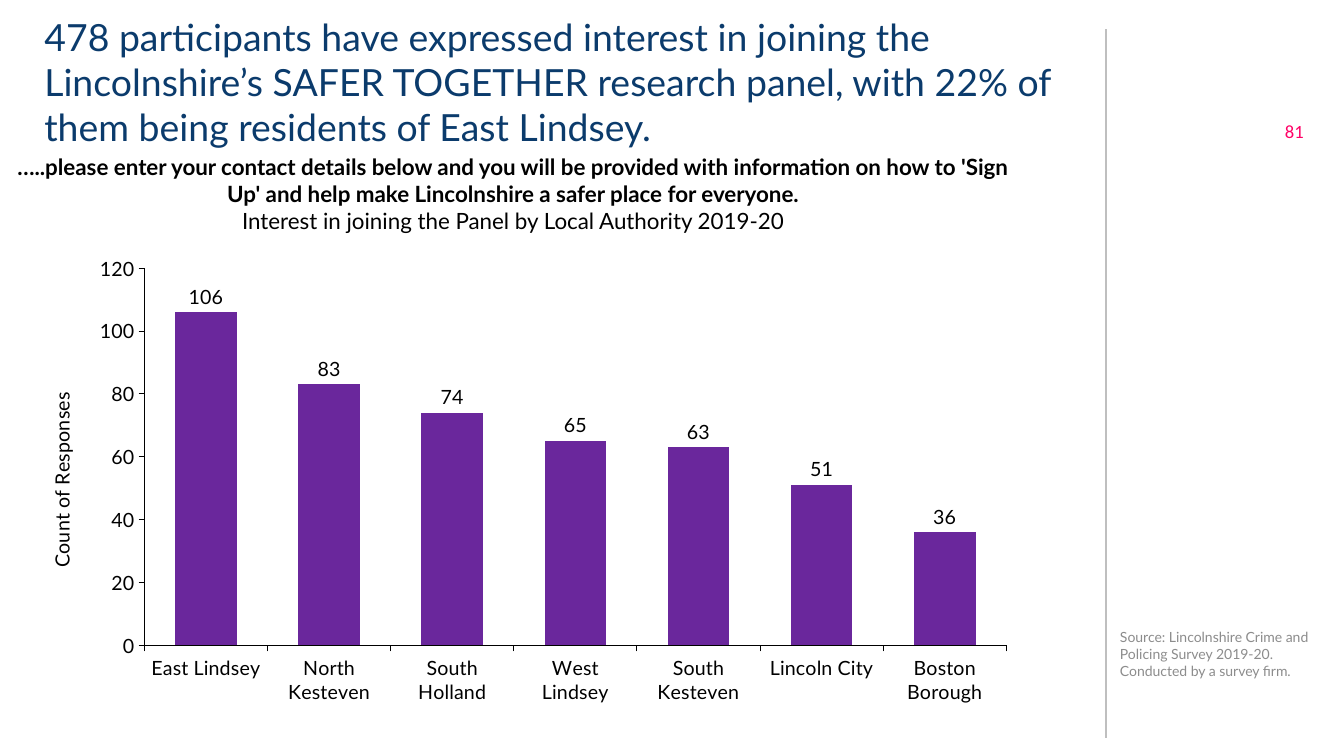
import pptx
import pptx.chart.data
import pptx.dml.color
import pptx.enum.chart
import pptx.enum.shapes
import pptx.enum.text
import pptx.oxml
import pptx.oxml.ns
import pptx.util
from pptx.util import Inches

TITLE = ("478 participants have expressed interest in joining the Lincolnshire’s SAFER TOGETHER "
         "research panel, with 22% of them being residents of East Lindsey.")
QUESTION = ("…..please enter your contact details below and you will be provided with information "
            "on how to 'Sign Up' and help make Lincolnshire a safer place for everyone.")
CHART_TITLE = "Interest in joining the Panel by Local Authority 2019-20"
SOURCE = "Source: Lincolnshire Crime and Policing Survey 2019-20. Conducted by a survey firm."
PAGE = "81"
AXIS_TITLE = "Count of Responses"
RESPONSES = {
    "East Lindsey": 106,
    "North Kesteven": 83,
    "South Holland": 74,
    "West Lindsey": 65,
    "South Kesteven": 63,
    "Lincoln City": 51,
    "Boston Borough": 36,
}
PLOT_AREA = {"x": 0.12, "y": 0.05, "w": 0.86, "h": 0.81}
BLACK = "000000"
ALIGN = pptx.enum.text.PP_ALIGN
ANCHOR = pptx.enum.text.MSO_ANCHOR


def rgb(value):
    return pptx.dml.color.RGBColor.from_string(value)


def style(font, size, color, name="Lato", bold=False):
    font.size = pptx.util.Pt(size)
    font.name = name
    font.bold = bold
    font.color.rgb = rgb(color)


def write(sp, box, lines, size, color, name="Lato", align=ALIGN.LEFT,
          anchor=ANCHOR.TOP, inset=(0.1, 0.05)):
    sp.left, sp.top, sp.width, sp.height = map(Inches, box)
    tf = sp.text_frame
    tf.word_wrap = True
    tf.auto_size = pptx.enum.text.MSO_AUTO_SIZE.NONE
    tf.vertical_anchor = anchor
    tf.margin_left = tf.margin_right = Inches(inset[0])
    tf.margin_top = tf.margin_bottom = Inches(inset[1])
    for i, (text, bold) in enumerate(lines):
        p = tf.add_paragraph() if i else tf.paragraphs[0]
        p.alignment = align
        p.line_spacing = 1.0
        p.space_before = pptx.util.Pt(0)
        r = p.add_run()
        r.text = text
        style(r.font, size, color, name, bold)


def add_text(s, box, lines, size, color, **options):
    sp = s.shapes.add_textbox(*map(Inches, box))
    write(sp, box, lines, size, color, **options)


def add_divider(s):
    line = s.shapes.add_connector(pptx.enum.shapes.MSO_CONNECTOR.STRAIGHT,
                                  Inches(10.97), Inches(0.29), Inches(10.97), Inches(7.32))
    line.line.color.rgb = rgb("BFBFBF")
    line.line.width = pptx.util.Pt(1)
    line._element.spPr.append(pptx.oxml.parse_xml(
        f"<a:effectLst {pptx.oxml.ns.nsdecls('a')}/>"))


def place_plot(chart):
    plot_area = chart._chartSpace.chart.plotArea
    for old in plot_area.findall(pptx.oxml.ns.qn("c:layout")):
        plot_area.remove(old)
    sizes = "".join(f'<c:{k} val="{v}"/>' for k, v in PLOT_AREA.items())
    plot_area.insert(0, pptx.oxml.parse_xml(
        f"<c:layout {pptx.oxml.ns.nsdecls('c')}><c:manualLayout>"
        '<c:layoutTarget val="inner"/><c:xMode val="edge"/><c:yMode val="edge"/>'
        f"{sizes}</c:manualLayout></c:layout>"))


def add_responses_chart(s):
    data = pptx.chart.data.CategoryChartData(number_format="0")
    data.categories = list(RESPONSES)
    data.add_series("Series 1", list(RESPONSES.values()))
    chart = s.shapes.add_chart(pptx.enum.chart.XL_CHART_TYPE.COLUMN_CLUSTERED, Inches(0.24),
                               Inches(2.43), Inches(9.94), Inches(4.62), data).chart
    chart.has_legend = False
    chart.has_title = False
    style(chart.font, 14, BLACK)

    plot = chart.plots[0]
    plot.gap_width = 100
    plot.vary_by_categories = False
    fill = plot.series[0].format.fill
    fill.solid()
    fill.fore_color.rgb = rgb("6A279C")
    plot.has_data_labels = True
    labels = plot.data_labels
    labels.show_value = True
    labels.number_format = "0"
    labels.number_format_is_linked = False
    labels.position = pptx.enum.chart.XL_LABEL_POSITION.OUTSIDE_END
    style(labels.font, 14, BLACK)

    for axis in (chart.category_axis, chart.value_axis):
        axis.has_major_gridlines = False
        axis.major_tick_mark = pptx.enum.chart.XL_TICK_MARK.OUTSIDE
        axis.minor_tick_mark = pptx.enum.chart.XL_TICK_MARK.NONE
        axis.format.line.color.rgb = rgb(BLACK)
        axis.format.line.width = pptx.util.Pt(0.75)
        style(axis.tick_labels.font, 14, BLACK)

    axis = chart.value_axis
    axis.minimum_scale, axis.maximum_scale, axis.major_unit = 0, 120, 20
    axis.tick_labels.number_format = "0"
    axis.tick_labels.number_format_is_linked = False
    r = axis.axis_title.text_frame.paragraphs[0].add_run()
    r.text = AXIS_TITLE
    style(r.font, 14, BLACK)
    place_plot(chart)


def main():
    prs = pptx.Presentation()
    prs.slide_width, prs.slide_height = Inches(13.33), Inches(7.5)
    s = prs.slides.add_slide(prs.slide_layouts[5])
    add_divider(s)
    add_text(s, (11.01, 5.96, 2.32, 1.05), [(SOURCE, False)], 10, "8C8C8C",
             anchor=ANCHOR.MIDDLE)
    add_text(s, (0, 1.47, 10.18, 0.91), [(QUESTION, True), (CHART_TITLE, False)], 16, BLACK,
             align=ALIGN.CENTER)
    write(s.shapes.title, (0.31, 0.07, 10.52, 1.5), [(TITLE, False)], 26.7, "0B3B6C",
          inset=(0.13, 0.07))
    add_responses_chart(s)
    add_text(s, (9.92, 1.04, 3.11, 0.52), [(PAGE, False)], 13.3, "FF0066", name="Calibri",
             align=ALIGN.RIGHT, anchor=ANCHOR.MIDDLE)
    prs.save("out.pptx")


if __name__ == "__main__":
    main()
